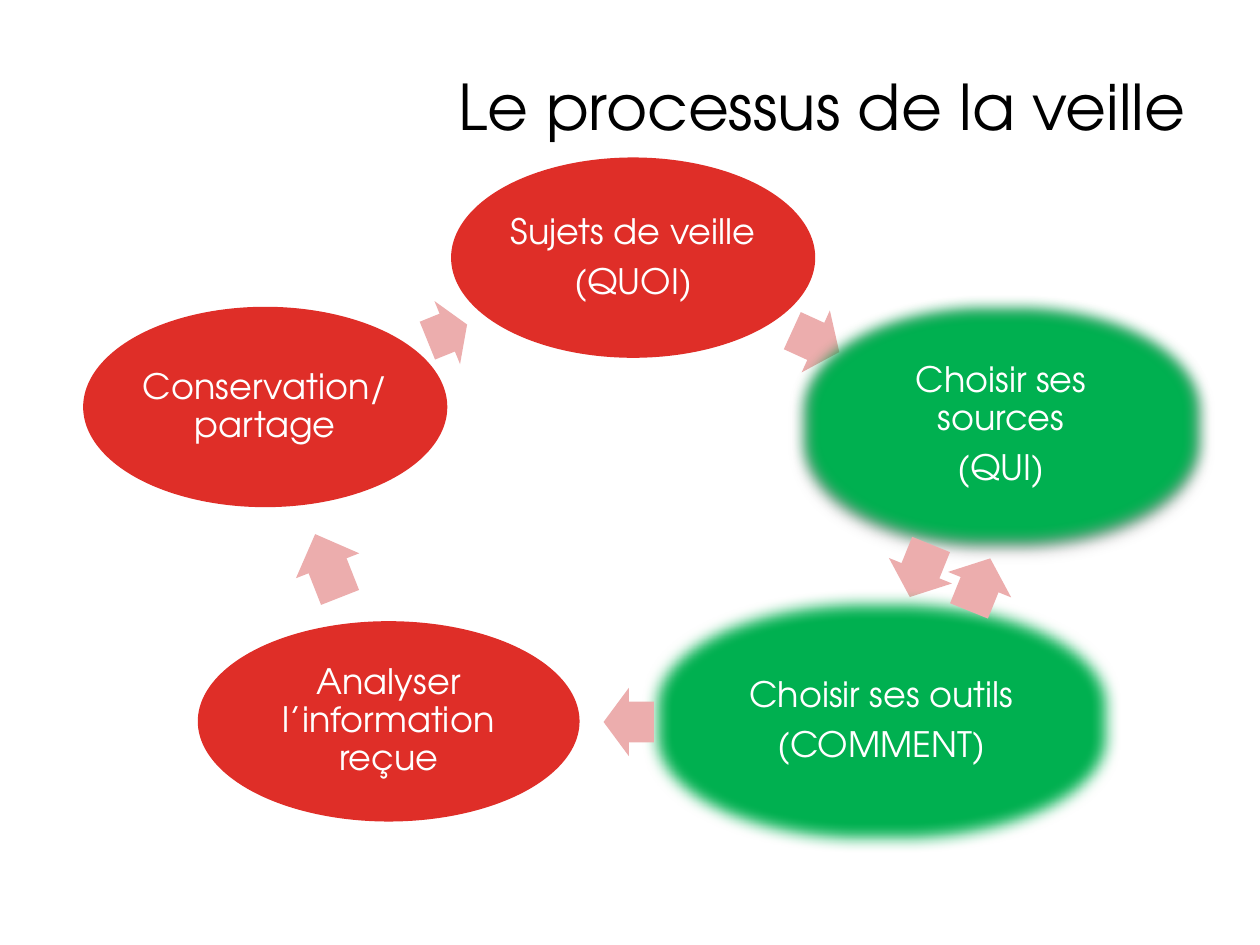
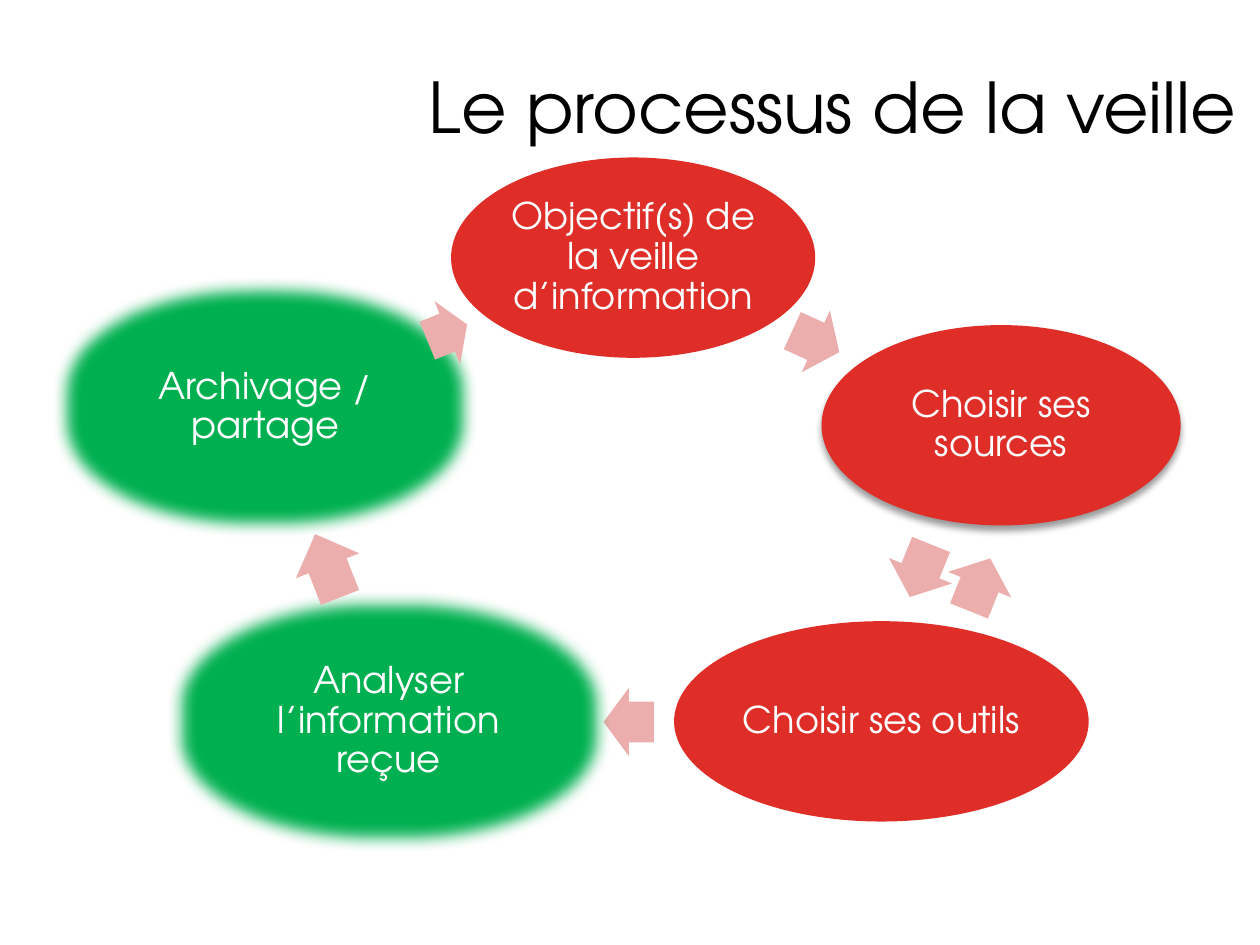
import lxml.etree
import pptx
import pptx.dml.color
import pptx.enum.shapes
import pptx.enum.text
import pptx.oxml.ns
import pptx.util

COLS, ROWS, CELL = 100, 75, pptx.util.Inches(0.1)
FONT = "TeX Gyre Adventor"
HUES = {"ink": "000000", "text": "FFFFFF", "step": "DF2E28",
        "focus": "00B050", "arrow": "ECADAD"}
KIND = pptx.enum.shapes.MSO_SHAPE
ALIGN = pptx.enum.text.PP_ALIGN
MIDDLE = pptx.enum.text.MSO_ANCHOR.MIDDLE

RING = (6.6, 12.5)
NODE_ROWS, ARROW_ROWS = 15.9, 5.4
NODES = [(43.65, 7.95, 28.9), (72.85, 21.25, 28.5), (63.35, 44.75, 32.9),
         (24.25, 44.75, 30.3), (14.45, 19.8, 28.9)]
ARROWS = [(58.15, 14.6, 4.1, 24.5), (66.45, 32.8, 4.5, 112),
          (43.3, 44.8, 4, 180), (19.4, 32.4, 5.4, 248.5),
          (28.9, 13.9, 3.4, 337.9)]
RETURN = (71.15, 33.9, 4.5, 292)
RAISED = 1

SLIDES = [
    {"title": "Le processus de la veille", "left": 5.1, "size": 36,
     "label": 20, "focus": {1, 2},
     "steps": [["Sujets de veille", "(QUOI)"],
               ["Choisir ses sources", "(QUI)"],
               ["Choisir ses outils", "(COMMENT)"],
               ["Analyser l’information reçue"],
               ["Conservation/ partage"]]},
    {"title": "Le processus de la veille", "left": 9.1, "size": 40,
     "label": 21, "focus": {3, 4},
     "steps": [["Objectif(s) de la veille d’information"],
               ["Choisir ses sources"],
               ["Choisir ses outils"],
               ["Analyser l’information reçue"],
               ["Archivage / partage"]]},
]


def cells(*counts):
    """Turn grid cells into lengths."""
    return [round(count * CELL) for count in counts]


def color(name):
    """Look up a colour by its role."""
    return pptx.dml.color.RGBColor.from_string(HUES[name])


def write(para, text, size, hue, align):
    """Add one styled run to a paragraph."""
    para.alignment = align
    run = para.add_run()
    run.text = text
    run.font.name = FONT
    run.font.size = pptx.util.Pt(size)
    run.font.color.rgb = color(hue)


def draw(slide, kind, box, mid, size, hue):
    """Draw a plain filled shape centred at a point of the box."""
    left, top = (box[i] + mid[i] - size[i] / 2 for i in range(2))
    shape = slide.shapes.add_shape(kind, *cells(left, top, *size))
    shape.shadow.inherit = False
    shape.fill.solid()
    shape.fill.fore_color.rgb = color(hue)
    shape.line.fill.background()
    return shape


def effect(shape, tag, hue, alpha, **attrs):
    """Append a glow or shadow to the effect list of a shape."""
    qn = pptx.oxml.ns.qn
    group = shape.element.spPr.find(qn("a:effectLst"))
    item = lxml.etree.SubElement(group, qn(tag), attrs)
    tint = lxml.etree.SubElement(item, qn("a:srgbClr"), val=HUES[hue])
    lxml.etree.SubElement(tint, qn("a:alpha"), val=str(alpha * 1000))


def title(slide, box, text, size):
    """Write the right-aligned title in its box."""
    frame = slide.shapes.add_textbox(*cells(*box)).text_frame
    frame.word_wrap = True
    frame.vertical_anchor = MIDDLE
    write(frame.paragraphs[0], text, size, "ink", ALIGN.RIGHT)


def node(slide, box, place, lines, size, focus, raised):
    """Draw one step of the ring with its label."""
    x, y, width = place
    shape = draw(slide, KIND.OVAL, box, (x, y), (width, NODE_ROWS),
                 "focus" if focus else "step")
    if focus:
        effect(shape, "a:glow", "focus", 100, rad=str(pptx.util.Pt(18)))
    if raised:
        effect(shape, "a:outerShdw", "ink", 40, blurRad=str(pptx.util.Pt(4)),
               dist=str(pptx.util.Pt(3)), dir="5400000", rotWithShape="0")
    frame = shape.text_frame
    frame.word_wrap = True
    frame.vertical_anchor = MIDDLE
    frame.margin_left = frame.margin_right = pptx.util.Inches(0.03)
    frame.margin_top = frame.margin_bottom = pptx.util.Inches(0.03)
    for i, line in enumerate(lines):
        para = frame.add_paragraph() if i else frame.paragraphs[0]
        para.line_spacing = 0.9
        para.space_after = pptx.util.Pt(0.35 * size)
        write(para, line, size, "text", ALIGN.CENTER)


def arrow(slide, box, place):
    """Draw one turned block arrow between two steps."""
    x, y, width, angle = place
    shape = draw(slide, KIND.RIGHT_ARROW, box, (x, y), (width, ARROW_ROWS),
                 "arrow")
    shape.adjustments[0], shape.adjustments[1] = 0.6, 0.5
    shape.rotation = angle


def ring(slide, box, data):
    """Draw the cycle of steps and arrows in its box."""
    for i, (place, turn) in enumerate(zip(NODES, ARROWS)):
        node(slide, box, place, data["steps"][i], data["label"],
             i in data["focus"], i == RAISED)
        arrow(slide, box, turn)
    arrow(slide, box, RETURN)


def main():
    """Build and save the deck."""
    deck = pptx.Presentation()
    deck.slide_width, deck.slide_height = cells(COLS, ROWS)
    for data in SLIDES:
        slide = deck.slides.add_slide(deck.slide_layouts[6])
        title(slide, (data["left"], 2.1, 90, 12.5), data["title"], data["size"])
        ring(slide, RING, data)
    deck.save("out.pptx")


if __name__ == "__main__":
    main()
